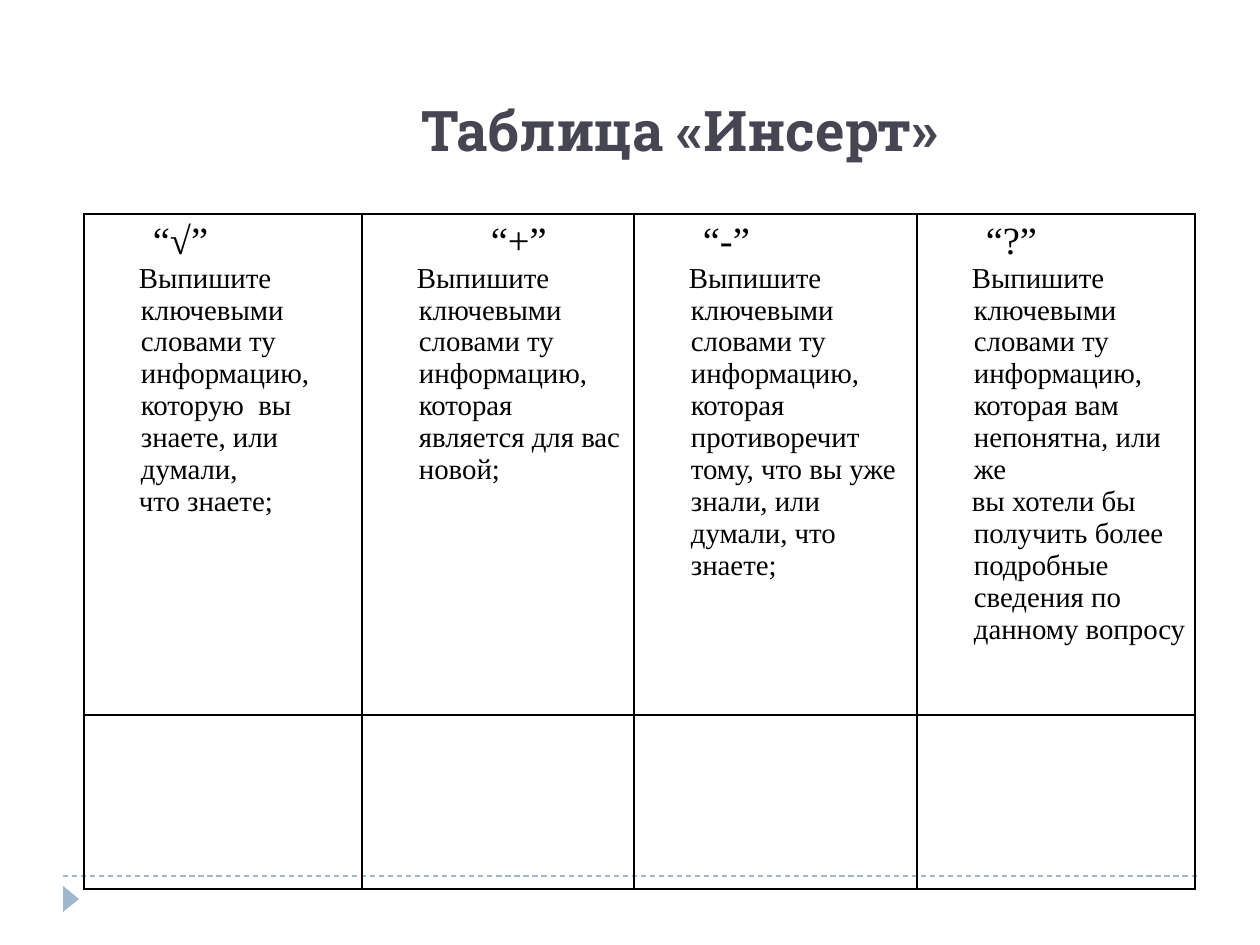
from lxml.etree import SubElement
from pptx import Presentation
from pptx.dml.color import RGBColor
from pptx.enum.dml import MSO_LINE
from pptx.enum.shapes import MSO_CONNECTOR, MSO_SHAPE
from pptx.enum.text import MSO_ANCHOR
from pptx.oxml import parse_xml
from pptx.oxml.ns import nsdecls, qn
from pptx.util import Pt

SCALE = 914400 / 126
ACCENT = "9FB8CD"
BLACK = "000000"
COLUMN_WIDTHS = [278, 272, 283, 278]
ROW_HEIGHTS = [501, 174]
LEAD = "Выпишите ключевыми словами ту информацию, "
COLUMNS = [
    ("“√”", 60, ["которую  вы знаете, или думали,", "что знаете;"]),
    ("“+”", 120, ["которая является для вас новой;"]),
    ("“-”", 60, ["которая противоречит тому, что вы уже знали, или думали, что знаете;"]),
    ("“?”", 60, ["которая вам  непонятна, или же",
                 "вы хотели бы получить более подробные сведения по данному вопросу"]),
]


def px(length):
    """Turn pixels into EMU."""
    return round(length * SCALE)


def color(value):
    """Turn a hex string into a colour."""
    return RGBColor.from_string(value)


def set_font(paragraph, name, size, value, bold=False):
    """Set the font of a whole paragraph."""
    font = paragraph.font
    font.name, font.size, font.bold = name, Pt(size), bold
    font.color.rgb = color(value)


def set_indent(paragraph, margin, first_line=0):
    """Set the left margin and first-line indent of a paragraph."""
    properties = paragraph._p.get_or_add_pPr()
    properties.set("marL", str(px(margin)))
    properties.set("indent", str(px(first_line)))


def style_cell(cell):
    """Give a cell its insets, no fill and thin black borders."""
    cell.margin_left = cell.margin_right = px(9)
    cell.margin_top = cell.margin_bottom = px(6)
    cell.fill.background()
    properties = cell._tc.get_or_add_tcPr()
    for index, side in enumerate("LRTB"):
        properties.insert(index, parse_xml(
            f'<a:ln{side} {nsdecls("a")} w="12700"><a:solidFill>'
            f'<a:srgbClr val="{BLACK}"/></a:solidFill></a:ln{side}>'))


def add_title(slide, left, top, width, height):
    """Add the slide title."""
    frame = slide.shapes.add_textbox(px(left), px(top), px(width), px(height)).text_frame
    frame.word_wrap = True
    frame.vertical_anchor = MSO_ANCHOR.MIDDLE
    paragraph = frame.paragraphs[0]
    paragraph.text = "Таблица «Инсерт»"
    set_font(paragraph, "Roboto Slab", 32, "464653", bold=True)


def add_footer(slide, left, top, width):
    """Add the dashed rule with the arrow marker below it."""
    rule = slide.shapes.add_connector(
        MSO_CONNECTOR.STRAIGHT, px(left), px(top), px(left + width), px(top))
    rule.line.color.rgb = color(ACCENT)
    rule.line.width = Pt(0.75)
    rule.line.dash_style = MSO_LINE.DASH
    SubElement(rule._element.spPr, qn("a:effectLst"))
    marker = slide.shapes.add_shape(
        MSO_SHAPE.ISOSCELES_TRIANGLE, px(left - 5), px(top + 15), px(26), px(16))
    marker.rotation = 90
    marker.shadow.inherit = False
    marker.fill.solid()
    marker.fill.fore_color.rgb = color(ACCENT)
    marker.line.fill.background()


def add_insert_table(slide, left, top):
    """Add the table of marks with an empty row to fill in."""
    table = slide.shapes.add_table(
        len(ROW_HEIGHTS), len(COLUMN_WIDTHS), px(left), px(top),
        px(sum(COLUMN_WIDTHS)), px(sum(ROW_HEIGHTS))).table
    table.first_row = table.horz_banding = False
    for column, width in zip(table.columns, COLUMN_WIDTHS):
        column.width = px(width)
    for row, height in zip(table.rows, ROW_HEIGHTS):
        row.height = px(height)
    for cell in table.iter_cells():
        style_cell(cell)
    for index, (mark, margin, (ending, *others)) in enumerate(COLUMNS):
        frame = table.cell(0, index).text_frame
        heading = frame.paragraphs[0]
        heading.text = mark
        set_indent(heading, margin)
        set_font(heading, "Times New Roman", 22, BLACK)
        for text in [LEAD + ending, *others]:
            paragraph = frame.add_paragraph()
            paragraph.text = text
            set_indent(paragraph, 48, -2)
            set_font(paragraph, "Times New Roman", 16.5, BLACK)


def main():
    """Build and save the presentation."""
    presentation = Presentation()
    presentation.slide_width, presentation.slide_height = px(1260), px(945)
    slide = presentation.slides.add_slide(presentation.slide_layouts[6])
    add_footer(slide, 63, 876, 1134)
    add_title(slide, 409, 38, 851, 183)
    add_insert_table(slide, 84, 214)
    presentation.save("out.pptx")


if __name__ == "__main__":
    main()
